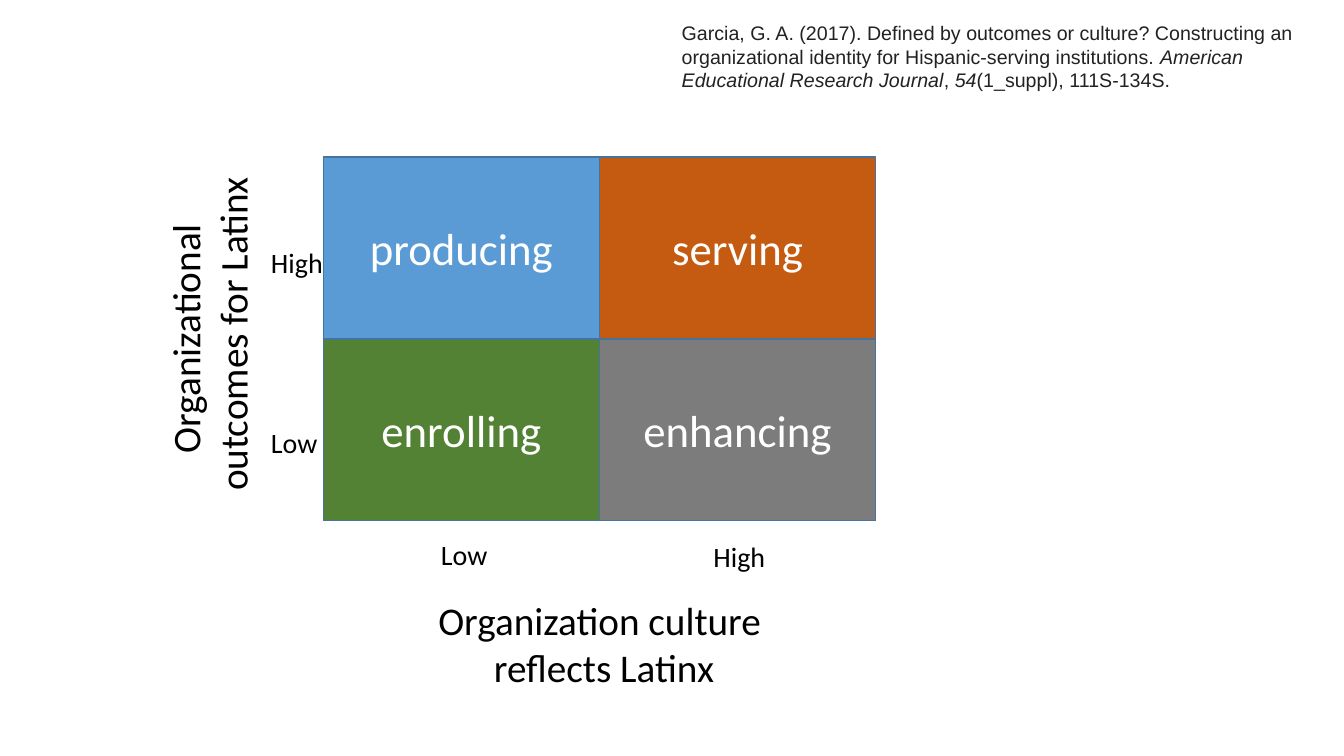
"""Build a slide with the two-by-two typology of organizational identities."""
from dataclasses import dataclass

from pptx import Presentation
from pptx.dml.color import RGBColor
from pptx.enum.shapes import MSO_SHAPE
from pptx.enum.text import MSO_ANCHOR, MSO_AUTO_SIZE, PP_ALIGN
from pptx.util import Cm, Pt

RECTANGLE = MSO_SHAPE.RECTANGLE
MIDDLE = MSO_ANCHOR.MIDDLE
GROW = MSO_AUTO_SIZE.SHAPE_TO_FIT_TEXT
LEFT, CENTER = PP_ALIGN.LEFT, PP_ALIGN.CENTER
BLANK_LAYOUT = 6


@dataclass(frozen=True)
class Theme:
    """Fonts, type sizes and colours of the slide."""
    font: str = "Calibri"
    citation_font: str = "Arial"
    quadrant_size: int = 32
    axis_size: int = 28
    level_size: int = 20
    citation_size: int = 14
    text: str = "000000"
    inverse: str = "FFFFFF"
    citation: str = "222222"
    outline: str = "43739E"
    producing: str = "5B9BD5"
    serving: str = "C55A11"
    enrolling: str = "548235"
    enhancing: str = "7C7C7C"


class MatrixSlide:
    """Holds the theme and the page and draws each kind of element."""

    def __init__(self, page, theme):
        """Remember the page and the theme."""
        self.page = page
        self.theme = theme

    def format_para(self, para, size, color, font, align):
        """Align a paragraph and style its runs."""
        para.alignment = align
        for span in para.runs:
            span.font.name = font
            span.font.size = Pt(size)
            span.font.color.rgb = RGBColor.from_string(color)

    def quadrant(self, name, fill, left, top, width, height):
        """Draw one coloured cell of the matrix."""
        theme = self.theme
        box = self.page.shapes.add_shape(
            RECTANGLE, Cm(left), Cm(top), Cm(width), Cm(height))
        box.shadow.inherit = False
        box.fill.solid()
        box.fill.fore_color.rgb = RGBColor.from_string(fill)
        box.line.color.rgb = RGBColor.from_string(theme.outline)
        box.line.width = Pt(1)
        box.text_frame.text = name
        box.text_frame.vertical_anchor = MIDDLE
        self.format_para(box.text_frame.paragraphs[0], theme.quadrant_size,
                         theme.inverse, theme.font, CENTER)

    def text_box(self, left, top, width, height, wrap=False):
        """Add an empty text box that grows with its text."""
        box = self.page.shapes.add_textbox(
            Cm(left), Cm(top), Cm(width), Cm(height))
        box.text_frame.word_wrap = wrap
        box.text_frame.auto_size = GROW
        return box

    def axis_title(self, text, left, top, rotation=0):
        """Write a two-line axis title."""
        theme = self.theme
        box = self.text_box(left, top, 8.74, 2.64)
        box.rotation = rotation
        box.text_frame.text = text
        for para in box.text_frame.paragraphs:
            self.format_para(para, theme.axis_size, theme.text, theme.font, CENTER)

    def level(self, text, left, top, width):
        """Write a level label beside an axis."""
        theme = self.theme
        box = self.text_box(left, top, width, 1.11)
        box.text_frame.text = text
        self.format_para(box.text_frame.paragraphs[0], theme.level_size,
                         theme.text, theme.font, LEFT)

    def citation(self, parts, left, top, width, height):
        """Write the reference, with some parts in italics."""
        theme = self.theme
        box = self.text_box(left, top, width, height, wrap=True)
        para = box.text_frame.paragraphs[0]
        for text, italic in parts:
            span = para.add_run()
            span.text = text
            span.font.italic = italic
        self.format_para(para, theme.citation_size, theme.citation,
                         theme.citation_font, LEFT)


def main():
    """Compose and save the slide."""
    deck = Presentation()
    deck.slide_width, deck.slide_height = Cm(33.87), Cm(19.05)
    theme = Theme()
    page = deck.slides.add_slide(deck.slide_layouts[BLANK_LAYOUT])
    matrix = MatrixSlide(page, theme)

    left, top, width, height = 8.15, 3.96, 6.96, 4.58
    quadrants = [
        [("producing", theme.producing), ("serving", theme.serving)],
        [("enrolling", theme.enrolling), ("enhancing", theme.enhancing)],
    ]
    for row, cells in enumerate(quadrants):
        for column, (name, fill) in enumerate(cells):
            matrix.quadrant(name, fill, left + column * width,
                            top + row * height, width, height)

    matrix.axis_title("Organizational\n outcomes for Latinx", 0.89, 7.21, 270)
    matrix.axis_title("Organization culture\n reflects Latinx", 10.74, 14.91)

    levels = [
        ("Low", 6.58, 10.6, 1.7),
        ("High", 6.58, 6.07, 1.83),
        ("Low", 10.86, 13.43, 1.7),
        ("High", 17.73, 13.47, 1.83),
    ]
    for level in levels:
        matrix.level(*level)

    matrix.citation([
        ("Garcia, G. A. (2017). Defined by outcomes or culture? Constructing an "
         "organizational identity for Hispanic-serving institutions. ", False),
        ("American Educational Research Journal", True),
        (", ", False),
        ("54", True),
        ("(1_suppl), 111S-134S.", False),
    ], 16.93, 0.41, 16.93, 2.05)

    deck.save("out.pptx")


if __name__ == "__main__":
    main()
